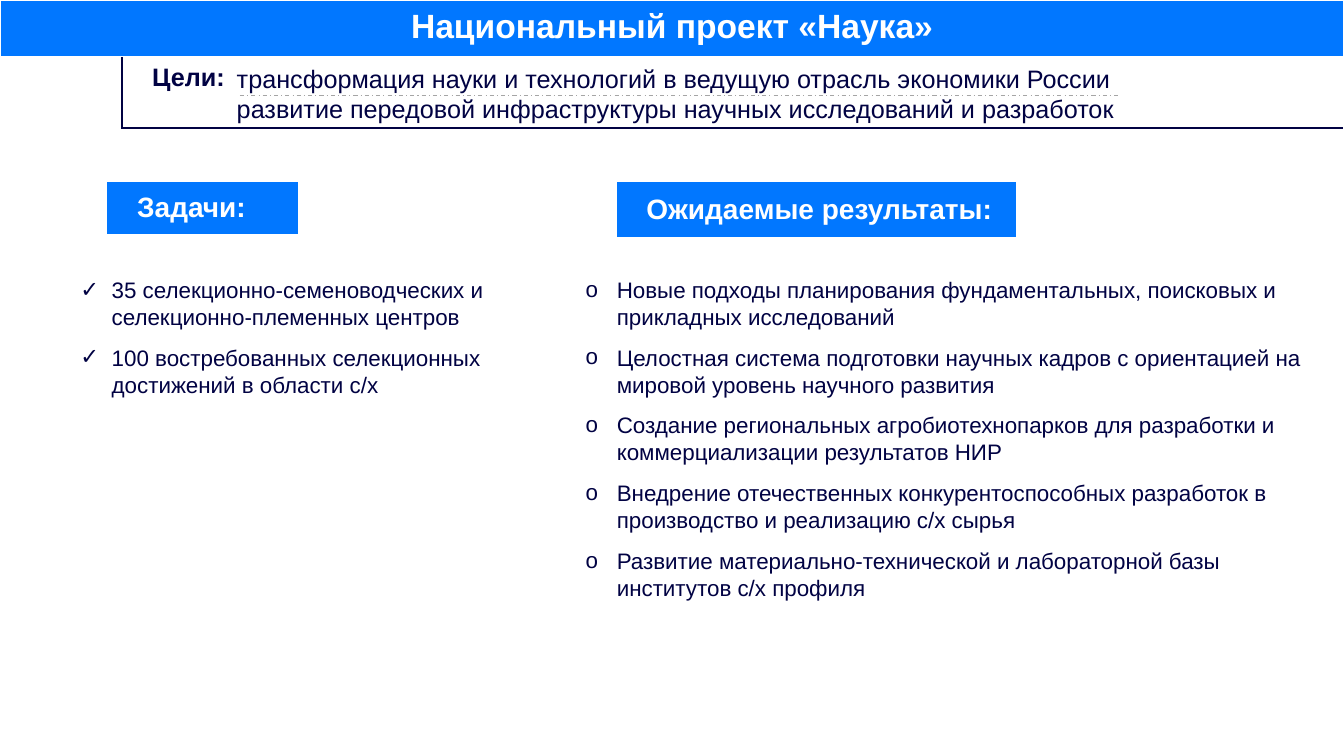
"""Builds the slide on the national project «Наука»: goals, tasks and expected results."""
from pptx import Presentation
from pptx.dml.color import RGBColor
from pptx.enum import dml, shapes, text
from pptx.oxml import parse_xml
from pptx.oxml.ns import nsdecls
from pptx.util import Inches, Pt

BLUE = RGBColor(0x01, 0x77, 0xFF)
NAVY = RGBColor(0x01, 0x02, 0x43)
WHITE = RGBColor(0xFF, 0xFF, 0xFF)
GRAY = RGBColor(0xA5, 0xA5, 0xA5)


def format_paragraph(paragraph, size, color, bold=False, left=0, hanging=0, bullet=None):
    properties = paragraph._p.get_or_add_pPr()
    properties.set("marL", str(Inches(left)))
    properties.set("indent", str(-Inches(hanging)))
    if bullet:
        properties.append(parse_xml(f'<a:buFont {nsdecls("a")} typeface="Arial"/>'))
        properties.append(parse_xml(f'<a:buChar {nsdecls("a")} char="{bullet}"/>'))
    for run in paragraph.runs:
        for name, value in {"name": "Arial", "size": Pt(size), "bold": bold}.items():
            setattr(run.font, name, value)
        run.font.color.rgb = color


presentation = Presentation()
presentation.slide_width = Inches(13.33)
presentation.slide_height = Inches(7.5)
slide = presentation.slides.add_slide(presentation.slide_layouts[6])

goals = [
    "трансформация науки и технологий в ведущую отрасль экономики России",
    "развитие передовой инфраструктуры научных исследований и разработок",
]
tasks = [
    "35 селекционно-семеноводческих и селекционно-племенных центров",
    "100 востребованных селекционных достижений в области с/х",
]
results = [
    "Новые подходы планирования фундаментальных, поисковых и прикладных исследований",
    "Целостная система подготовки научных кадров с ориентацией на мировой уровень научного развития",
    "Создание региональных агробиотехнопарков для разработки и коммерциализации результатов НИР",
    "Внедрение отечественных конкурентоспособных разработок в производство и реализацию с/х сырья",
    "Развитие материально-технической и лабораторной базы институтов с/х профиля",
]
goal_format = {"size": 18, "color": NAVY, "left": 0.2}
list_format = {"size": 16, "color": NAVY, "left": 0.31, "hanging": 0.31}
text_blocks = [
    (goals, (2.05, 0.58, 9.37, 0.71), 0, goal_format),
    (tasks, (0.7, 2.69, 4.77, 1.32), 10, {**list_format, "bullet": "✓"}),
    (results, (5.71, 2.69, 7.54, 3.35), 10, {**list_format, "bullet": "o"}),
]
for lines, box, space_after, line_format in text_blocks:
    text_frame = slide.shapes.add_textbox(*map(Inches, box)).text_frame
    text_frame.word_wrap = True
    text_frame.auto_size = text.MSO_AUTO_SIZE.SHAPE_TO_FIT_TEXT
    text_frame.text = "\n".join(lines)
    for paragraph in text_frame.paragraphs:
        paragraph.space_after = Pt(space_after)
        format_paragraph(paragraph, **line_format)

divider = slide.shapes.add_connector(
    shapes.MSO_CONNECTOR.STRAIGHT, Inches(2.38), Inches(0.95), Inches(11.1), Inches(0.95))
divider.line.color.rgb = GRAY
divider.line.width = Pt(0.75)
divider.line.dash_style = dml.MSO_LINE.DASH_DOT
divider._element.spPr.append(parse_xml(f'<a:effectLst {nsdecls("a")}/>'))

LEFT, CENTER = text.PP_ALIGN.LEFT, text.PP_ALIGN.CENTER
headings = [
    ("Национальный проект «Наука»", (0, 0, 13.33, 0.56), 24, WHITE, BLUE, CENTER, 0, 0.08),
    ("Цели:", (1.21, 0.57, 12.12, 0.7), 18, NAVY, None, LEFT, 0.2, 0.34),
    ("Задачи:", (1.06, 1.8, 1.9, 0.53), 20, WHITE, BLUE, LEFT, 0.2, 0.05),
    ("Ожидаемые результаты:", (6.11, 1.8, 3.97, 0.56), 20, WHITE, BLUE, LEFT, 0.2, 0.05),
]
for heading, box, size, color, fill, alignment, indent, margin_bottom in headings:
    table = slide.shapes.add_table(1, 1, *map(Inches, box)).table
    table.first_row = table.horz_banding = False
    cell = table.cell(0, 0)
    cell.text = heading
    cell.vertical_anchor = text.MSO_ANCHOR.MIDDLE
    cell.margin_bottom = Inches(margin_bottom)
    paragraph = cell.text_frame.paragraphs[0]
    paragraph.alignment = alignment
    format_paragraph(paragraph, size, color, bold=True, left=indent)
    if fill:
        cell.fill.solid()
        cell.fill.fore_color.rgb = fill
    else:
        cell.fill.background()
        for position, side in enumerate(("lnL", "lnB")):
            cell._tc.get_or_add_tcPr().insert(position, parse_xml(
                f'<a:{side} {nsdecls("a")} w="{Pt(1.5)}"><a:solidFill>'
                f'<a:srgbClr val="{NAVY}"/></a:solidFill></a:{side}>'))

presentation.save("out.pptx")
